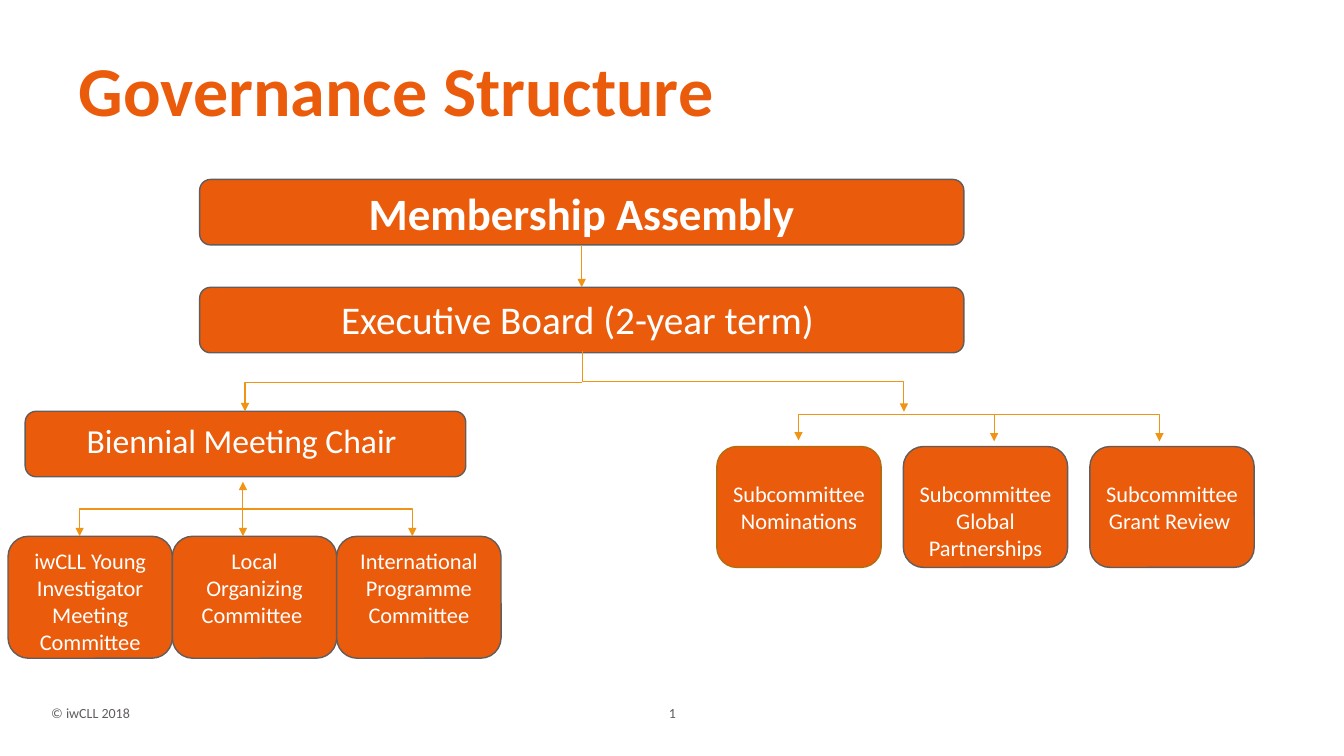
from lxml.etree import SubElement
from pptx import Presentation
from pptx.dml.color import RGBColor
from pptx.enum.shapes import MSO_CONNECTOR, MSO_SHAPE
from pptx.enum.text import MSO_ANCHOR, PP_ALIGN
from pptx.oxml.ns import qn
from pptx.util import Pt

PX = 9144
ORANGE, GREY, AMBER, WHITE = "EA5B0B", "625D5B", "F09415", "FFFFFF"


def paint(fmt, color):
    if hasattr(fmt, "solid"):
        fmt.solid()
        fmt = fmt.fore_color
    fmt.rgb = RGBColor.from_string(color)


def write(sp, text, size, color, align=PP_ALIGN.CENTER, bold=False):
    tf = sp.text_frame
    tf.word_wrap = True
    tf.text = text
    for p in tf.paragraphs:
        p.alignment = align
        for r in p.runs:
            r.font.name = "Calibri"
            r.font.size = Pt(size)
            r.font.bold = bold
            paint(r.font.color, color)


prs = Presentation()
prs.slide_width, prs.slide_height = 1333 * PX, 750 * PX
s = prs.slides.add_slide(prs.slide_layouts[5])

title = s.shapes.title
title.left, title.top, title.width, title.height = [v * PX for v in (68, 40, 1043, 98)]
write(title, "Governance Structure", 50, ORANGE, PP_ALIGN.LEFT, True)
title.text_frame.vertical_anchor = MSO_ANCHOR.MIDDLE
title.text_frame.margin_top = 13 * PX
title.text_frame.paragraphs[0].line_spacing = 0.9

footers = [
    ("© iwCLL 2018", 41, 99, PP_ALIGN.LEFT),
    ("1", 590, 154, PP_ALIGN.CENTER),
]
for text, x, w, align in footers:
    sp = s.shapes.add_textbox(x * PX, 694 * PX, w * PX, 29 * PX)
    write(sp, text, 10, GREY, align)

boxes = [
    ("Membership Assembly", 198, 178, 758, 65, 32),
    ("Executive Board (2-year term) ", 198, 285, 758, 65, 28),
    ("Biennial Meeting Chair ", 25, 408, 437, 65, 24),
]
committees = [
    "iwCLL Young Investigator Meeting Committee",
    "Local Organizing Committee ",
    "International Programme Committee",
]
subcommittees = [
    "Subcommittee\nNominations",
    "Subcommittee\nGlobal Partnerships",
    "Subcommittee\nGrant Review ",
]
boxes += [(text, 8 + 163 * i, 532, 163, 121, 16) for i, text in enumerate(committees)]
boxes += [(text, 711 + 185 * i, 443, 163, 120, 16) for i, text in enumerate(subcommittees)]

nodes = {}
for text, x, y, w, h, size in boxes:
    sp = s.shapes.add_shape(MSO_SHAPE.ROUNDED_RECTANGLE, x * PX, y * PX, w * PX, h * PX)
    sp.shadow.inherit = False
    paint(sp.fill, ORANGE)
    paint(sp.line.color, "B26D10" if "Nominations" in text else GREY)
    sp.line.width = Pt(1)
    tf = sp.text_frame
    tf.vertical_anchor = MSO_ANCHOR.TOP
    if text in subcommittees:
        tf.margin_top = 28 * PX
    write(sp, text, size, WHITE, bold=text == "Membership Assembly")
    nodes[text.strip()] = sp

assembly = nodes["Membership Assembly"]
assembly.text_frame.vertical_anchor = MSO_ANCHOR.MIDDLE
board = nodes["Executive Board (2-year term)"]

lines = [
    ("line", 577, 243, 0, 42, {}),
    ("bentConnector3", 707, 219, 60, 319, {"rot": "16200000", "flipH": "1"}),
    ("bentConnector2", 243, 379, 334, 29, {"rot": "10800000", "flipV": "1"}),
    ("bentConnector3", 133, 424, 54, 162, {"rot": "5400000"}),
    ("bentConnector2", 241, 505, 168, 27, {}),
    ("line", 241, 505, 0, 27, {}),
    ("bentConnector2", 792, 411, 194, 27, {}),
    ("bentConnector2", 986, 411, 164, 27, {}),
    ("line", 792, 411, 0, 26, {}),
]
for preset, x, y, w, h, turn in lines:
    kind = MSO_CONNECTOR.STRAIGHT if preset == "line" else MSO_CONNECTOR.ELBOW
    c = s.shapes.add_connector(kind, x * PX, y * PX, (x + w) * PX, (y + h) * PX)
    if (x, y) == (577, 243):
        c.begin_connect(assembly, 2)
        c.end_connect(board, 0)
    spPr = c._element.spPr
    spPr.find(qn("a:prstGeom")).set("prst", preset)
    for name, value in turn.items():
        spPr.find(qn("a:xfrm")).set(name, value)
    paint(c.line.color, AMBER)
    c.line.width = Pt(0.75)
    ln = spPr.find(qn("a:ln"))
    if turn.get("rot") == "5400000":
        SubElement(ln, qn("a:headEnd"), type="triangle")
    SubElement(ln, qn("a:tailEnd"), type="triangle")
    SubElement(spPr, qn("a:effectLst"))

prs.save("out.pptx")
